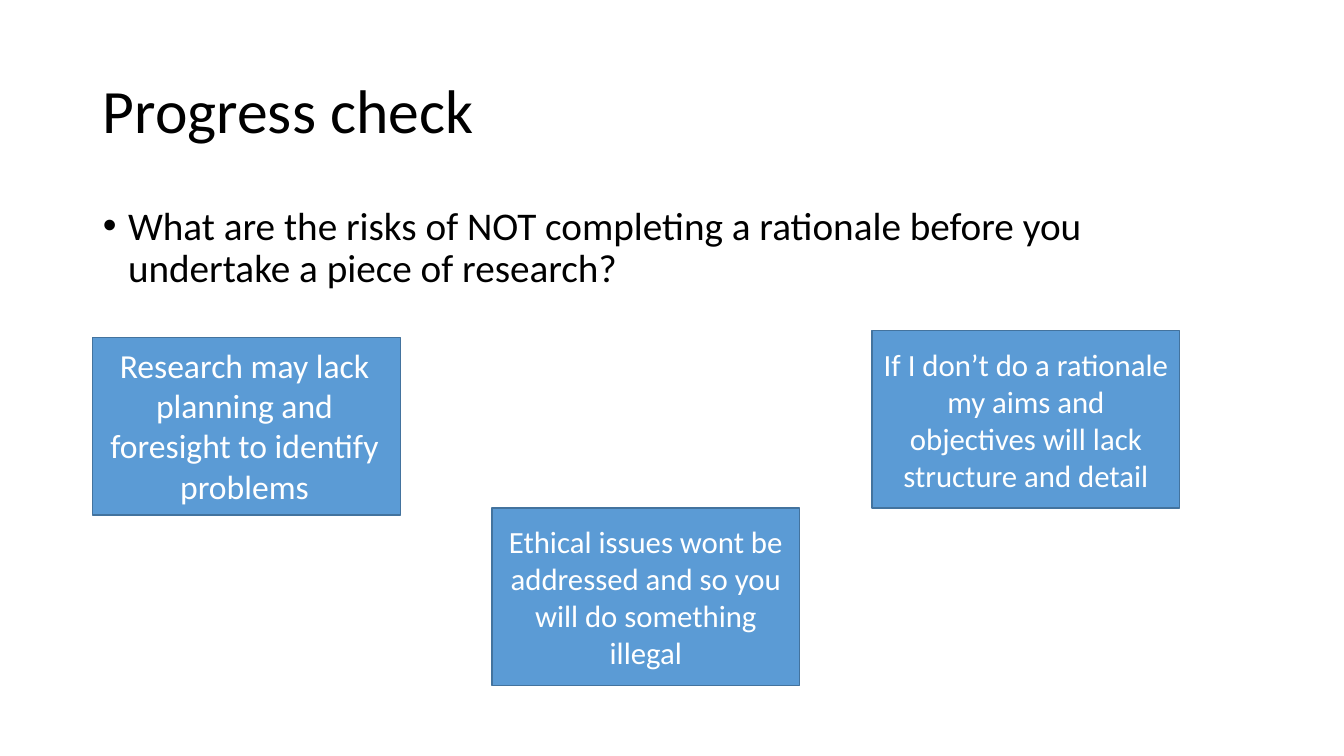
"""Build the progress check slide with its three risk cards."""
from dataclasses import dataclass

from pptx import Presentation
from pptx.dml.color import RGBColor
from pptx.enum.shapes import MSO_SHAPE
from pptx.enum.text import MSO_ANCHOR as Anchor, MSO_AUTO_SIZE as Fit, PP_ALIGN as Align
from pptx.util import Inches, Pt

WIDE, HIGH = 3.05, 1.76


@dataclass
class Card:
    left: float
    top: float
    text: str = ""


CARDS = [
    Card(0.92, 3.35),
    Card(4.88, 5.04, "Ethical issues wont be addressed and so you will do something illegal"),
    Card(8.65, 3.28, "If I don’t do a rationale my aims and objectives will lack structure and detail"),
]


def paint(target, code: str) -> None:
    target.rgb = RGBColor.from_string(code)


def place(shape, left: float, top: float, width: float, height: float) -> None:
    box = {"left": left, "top": top, "width": width, "height": height}
    for name, value in box.items():
        setattr(shape, name, Inches(value))


def write(shape, text: str, size: float, code: str, anchor, fit=Fit.NONE, **form):
    frame = shape.text_frame
    look = {"text": text, "word_wrap": True, "auto_size": fit, "vertical_anchor": anchor}
    for name, value in look.items():
        setattr(frame, name, value)
    para = frame.paragraphs[0]
    for name, value in form.items():
        setattr(para, name, value)
    font = para.runs[0].font
    for name, value in {"name": "Calibri", "size": Pt(size)}.items():
        setattr(font, name, value)
    paint(font.color, code)
    return para


def draw(slide, card: Card) -> None:
    shape = slide.shapes.add_shape(
        MSO_SHAPE.RECTANGLE, *map(Inches, (card.left, card.top, WIDE, HIGH)))
    shape.shadow.inherit = False
    shape.fill.solid()
    paint(shape.fill.fore_color, "5B9BD5")
    paint(shape.line.color, "43739E")
    shape.line.width = Pt(1)
    if card.text:
        write(shape, card.text, 22, "FFFFFF", Anchor.MIDDLE, alignment=Align.CENTER)


def main() -> None:
    deck = Presentation()
    deck.slide_width, deck.slide_height = Inches(13.33), Inches(7.5)
    slide = deck.slides.add_slide(deck.slide_layouts[1])
    title, body = slide.placeholders

    place(title, 0.92, 0.4, 11.5, 1.45)
    write(title, "Progress check", 44, "000000", Anchor.MIDDLE,
          alignment=Align.LEFT, line_spacing=0.9)

    place(body, 0.92, 2, 11.5, 4.76)
    ask = write(body, "What are the risks of NOT completing a rationale before you "
                "undertake a piece of research?", 28, "000000", Anchor.TOP,
                line_spacing=0.9, space_before=Pt(10))
    props = ask._p.get_or_add_pPr()
    for name, value in {"marL": 0.25, "indent": -0.25}.items():
        props.set(name, str(Inches(value)))

    for card in CARDS:
        draw(slide, card)
    label = slide.shapes.add_textbox(*map(Inches, (0.92, 3.37, 3.01, 1.72)))
    write(label, "Research may lack planning and foresight to identify problems",
          24, "FFFFFF", Anchor.TOP, Fit.SHAPE_TO_FIT_TEXT, alignment=Align.CENTER)

    deck.save("out.pptx")


if __name__ == "__main__":
    main()
